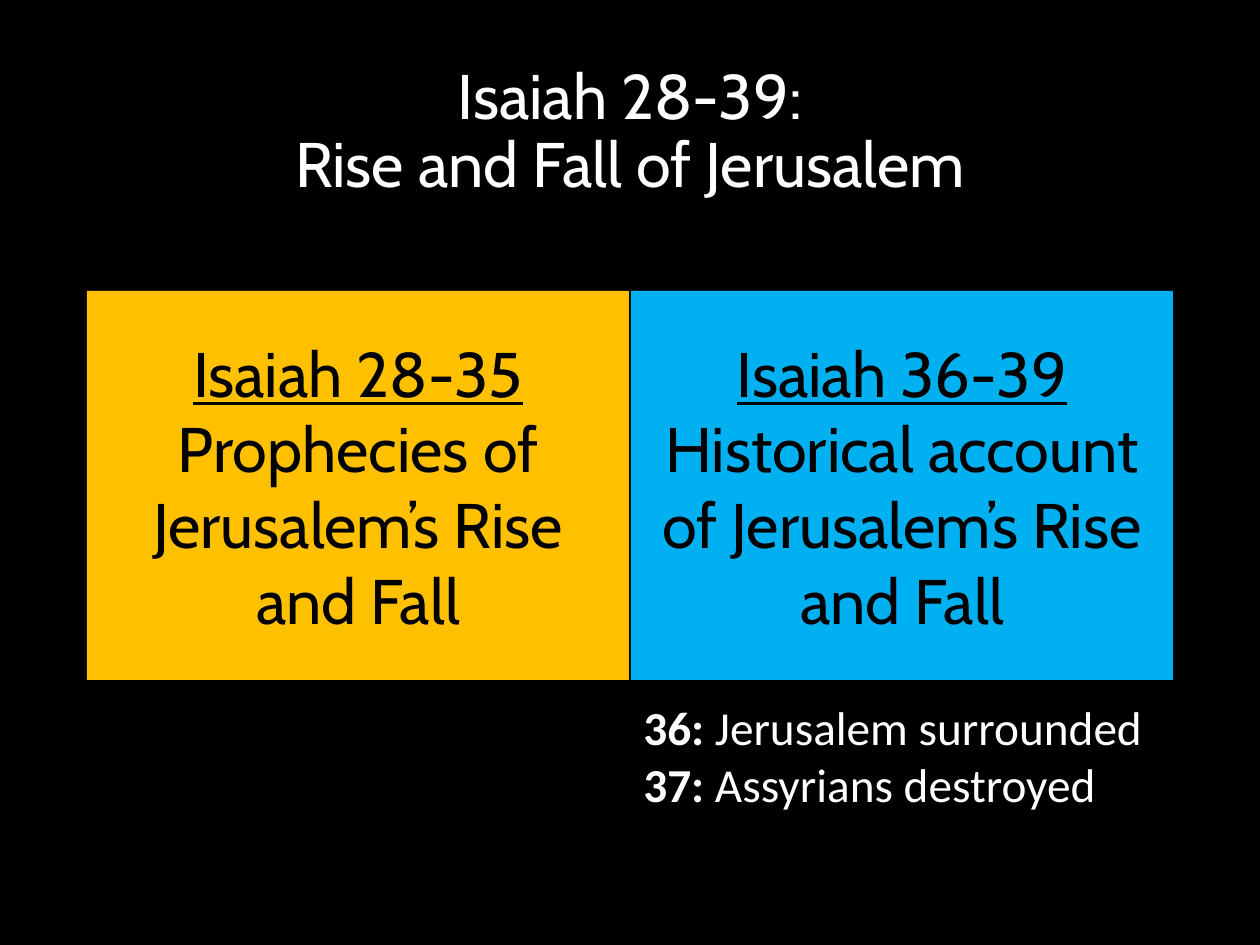
"""Build a slide outlining the two halves of Isaiah 28-39."""
import pptx
import pptx.dml.color
import pptx.enum.shapes
import pptx.enum.text
import pptx.util

PX = 914400 // 126
ALIGN = pptx.enum.text.PP_ALIGN
ANCHOR = pptx.enum.text.MSO_ANCHOR

TITLE = ["Isaiah 28-39:", "Rise and Fall of Jerusalem"]
PANELS = [
    ("Isaiah 28-35", "Prophecies of Jerusalem’s Rise and Fall", "FFC000"),
    ("Isaiah 36-39", "Historical account of Jerusalem’s Rise and Fall", "00B0F0"),
]
NOTES = [("36: ", "Jerusalem surrounded"), ("37: ", "Assyrians destroyed")]

LEFT, PANEL_TOP, PANEL_WIDTH, PANEL_HEIGHT, GAP = 87, 291, 542, 389, 2
TITLE_TOP, TITLE_HEIGHT = 59, 107
NOTES_TOP, NOTES_HEIGHT = 692, 127


def color(value):
    return pptx.dml.color.RGBColor.from_string(value)


def box(left, top, width, height):
    return [pptx.util.Emu(length * PX) for length in (left, top, width, height)]


def panel_left(index):
    return LEFT + index * (PANEL_WIDTH + GAP)


def write_lines(frame, lines, size, name, hue, align):
    frame.word_wrap = True
    frame.auto_size = pptx.enum.text.MSO_AUTO_SIZE.NONE
    for index, runs in enumerate(lines):
        paragraph = frame.paragraphs[0] if index == 0 else frame.add_paragraph()
        paragraph.alignment = align
        paragraph.font.size = pptx.util.Pt(size)
        paragraph.font.name = name
        paragraph.font.color.rgb = color(hue)
        for text in runs:
            paragraph.add_run().text = text
    return frame.paragraphs


def add_title(slide):
    title = slide.shapes.title
    title.left, title.top, title.width, title.height = box(
        LEFT, TITLE_TOP, 2 * PANEL_WIDTH + GAP, TITLE_HEIGHT)
    title.text_frame.vertical_anchor = ANCHOR.TOP
    lines = [[line] for line in TITLE]
    for paragraph in write_lines(title.text_frame, lines, 36, "Cabin", "FFFFFF", ALIGN.CENTER):
        paragraph.line_spacing = 0.9


def add_panel(slide, index, heading, body, fill):
    panel = slide.shapes.add_shape(
        pptx.enum.shapes.MSO_SHAPE.RECTANGLE,
        *box(panel_left(index), PANEL_TOP, PANEL_WIDTH, PANEL_HEIGHT))
    panel.shadow.inherit = False
    panel.fill.solid()
    panel.fill.fore_color.rgb = color(fill)
    panel.line.fill.background()
    panel.text_frame.vertical_anchor = ANCHOR.MIDDLE
    paragraphs = write_lines(
        panel.text_frame, [[heading], [body]], 36, "Cabin", "000000", ALIGN.CENTER)
    paragraphs[0].font.underline = True


def add_notes(slide):
    notes = slide.shapes.add_textbox(
        *box(panel_left(1), NOTES_TOP, PANEL_WIDTH, NOTES_HEIGHT))
    for paragraph in write_lines(notes.text_frame, NOTES, 27, "Calibri", "FFFFFF", ALIGN.LEFT):
        paragraph.runs[0].font.bold = True


def main():
    presentation = pptx.Presentation()
    presentation.slide_width = pptx.util.Inches(10)
    presentation.slide_height = pptx.util.Inches(7.5)
    slide = presentation.slides.add_slide(presentation.slide_layouts[5])
    slide.background.fill.solid()
    slide.background.fill.fore_color.rgb = color("000000")
    add_title(slide)
    for index, panel in enumerate(PANELS):
        add_panel(slide, index, *panel)
    add_notes(slide)
    presentation.save("out.pptx")


if __name__ == "__main__":
    main()
